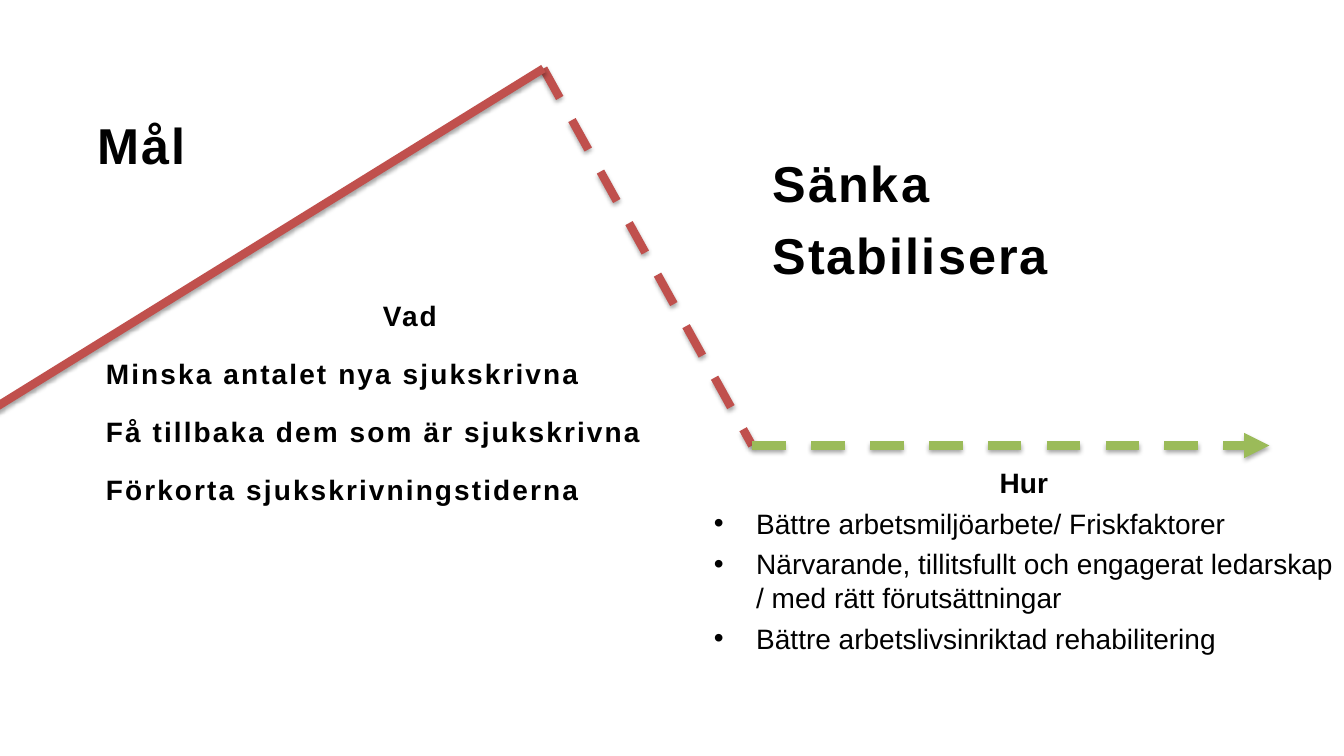
from lxml import etree
from pptx import Presentation
from pptx import util as u
from pptx.dml.color import RGBColor
from pptx.enum import dml, shapes, text
from pptx.oxml import ns

RED, GREEN, BLACK = "C0504D", "9BBB59", "000000"


def color(code):
    return RGBColor.from_string(code)


def add(parent, tag, **attrs):
    node = etree.SubElement(parent, ns.qn(tag))
    for key, val in attrs.items():
        node.set(key, str(val))
    return node


class Deck:
    font = "Arial"

    def __init__(self):
        self.prs = Presentation()
        self.prs.slide_width = u.Inches(13.33)
        self.prs.slide_height = u.Inches(7.5)
        self.slide = self.prs.slides.add_slide(self.prs.slide_layouts[4])
        self.group = None

    def fill(self, idx, box, lines, size, gap, lead=1.0, track=0, head=False,
             dots=False):
        """Place a placeholder; head centres the first line."""
        hold = self.slide.placeholders[idx]
        hold.left, hold.top, hold.width, hold.height = map(u.Inches, box)
        frame = hold.text_frame
        frame.word_wrap = True
        frame.auto_size = text.MSO_AUTO_SIZE.NONE
        frame.vertical_anchor = text.MSO_ANCHOR.TOP
        for i, line in enumerate(lines):
            para = frame.paragraphs[0] if i == 0 else frame.add_paragraph()
            first = head and i == 0
            para.alignment = text.PP_ALIGN.CENTER if first else text.PP_ALIGN.LEFT
            para.line_spacing = lead
            para.space_before = u.Pt(gap if i else 0)
            para.space_after = u.Pt(0)
            self.bullet(para, dots and not first)
            run = para.add_run()
            run.text = line
            if track:
                run.font._element.set("spc", str(track))
            font = para.font
            font.name, font.size = self.font, u.Pt(size)
            font.bold = first or not dots
            font.color.rgb = color(BLACK)

    def bullet(self, para, shown):
        props = para._p.get_or_add_pPr()
        step = u.Inches(0.42) if shown else 0
        props.set("marL", str(step))
        props.set("indent", str(-step))
        if shown:
            add(props, "a:buFont", typeface=self.font)
            add(props, "a:buChar", char="•")
        else:
            add(props, "a:buNone")

    def line(self, start, end, code, dash=False, arrow=False):
        if self.group is None:
            self.group = self.slide.shapes.add_group_shape()
        link = self.group.shapes.add_connector(
            shapes.MSO_CONNECTOR.STRAIGHT, *map(u.Inches, start + end))
        link.line.color.rgb = color(code)
        link.line.width = u.Pt(6)
        if dash:
            link.line.dash_style = dml.MSO_LINE.DASH
        props = link._element.spPr
        if arrow:
            add(props.find(ns.qn("a:ln")), "a:tailEnd", type="triangle")
        shade = add(add(props, "a:effectLst"), "a:outerShdw",
                    blurRad=u.Pt(3.1), dist=u.Pt(1.8), dir=5400000, rotWithShape=0)
        add(add(shade, "a:srgbClr", val=BLACK), "a:alpha", val=35000)

    def drop(self, idx):
        node = self.slide.placeholders[idx]._element
        node.getparent().remove(node)

    def save(self):
        self.prs.save("out.pptx")


def main():
    deck = Deck()
    deck.fill(0, (0.87, 1.08, 9.41, 0.67), ["Mål"], 36, 8.5, track=150)
    deck.fill(1, (7.56, 1.46, 4.72, 1.96), ["Sänka", "Stabilisera"], 36, 8.5,
              track=150)

    peak, low = (5.39, 0.68), (7.46, 4.42)
    deck.line(peak, low, RED, dash=True)
    deck.line(low, (12.59, 4.42), GREEN, dash=True, arrow=True)
    deck.line(peak, (-0.3, 4.2), RED)

    deck.fill(2, (0.95, 2.74, 6.23, 2.71), [
        "Vad",
        "Minska antalet nya sjukskrivna",
        "Få tillbaka dem som är sjukskrivna",
        "Förkorta sjukskrivningstiderna",
    ], 20, 5.5, lead=1.5, track=150, head=True)
    deck.fill(4, (6.98, 4.57, 6.35, 2.58), [
        "Hur",
        "Bättre arbetsmiljöarbete/ Friskfaktorer",
        "Närvarande, tillitsfullt och engagerat ledarskap / med rätt förutsättningar",
        "Bättre arbetslivsinriktad rehabilitering",
    ], 20, 5, head=True, dots=True)
    deck.drop(3)
    deck.save()


if __name__ == "__main__":
    main()
